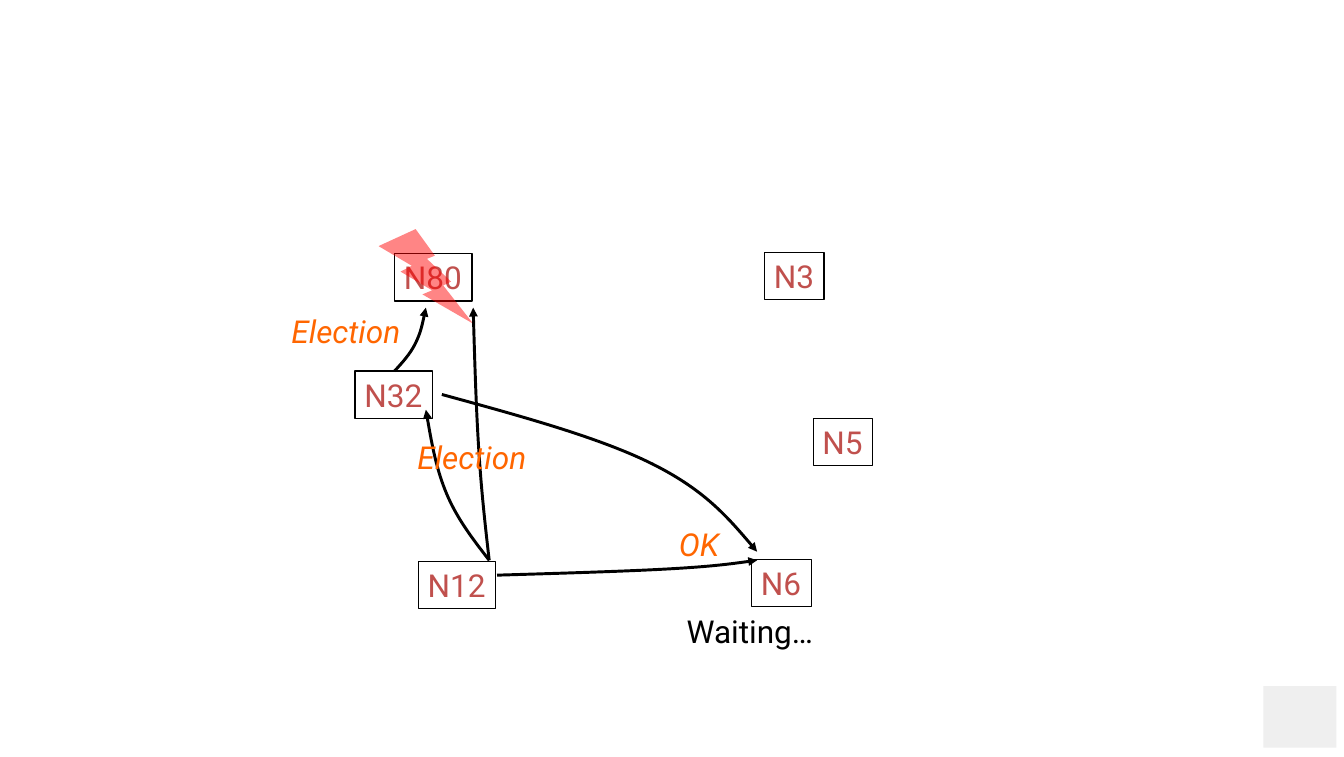
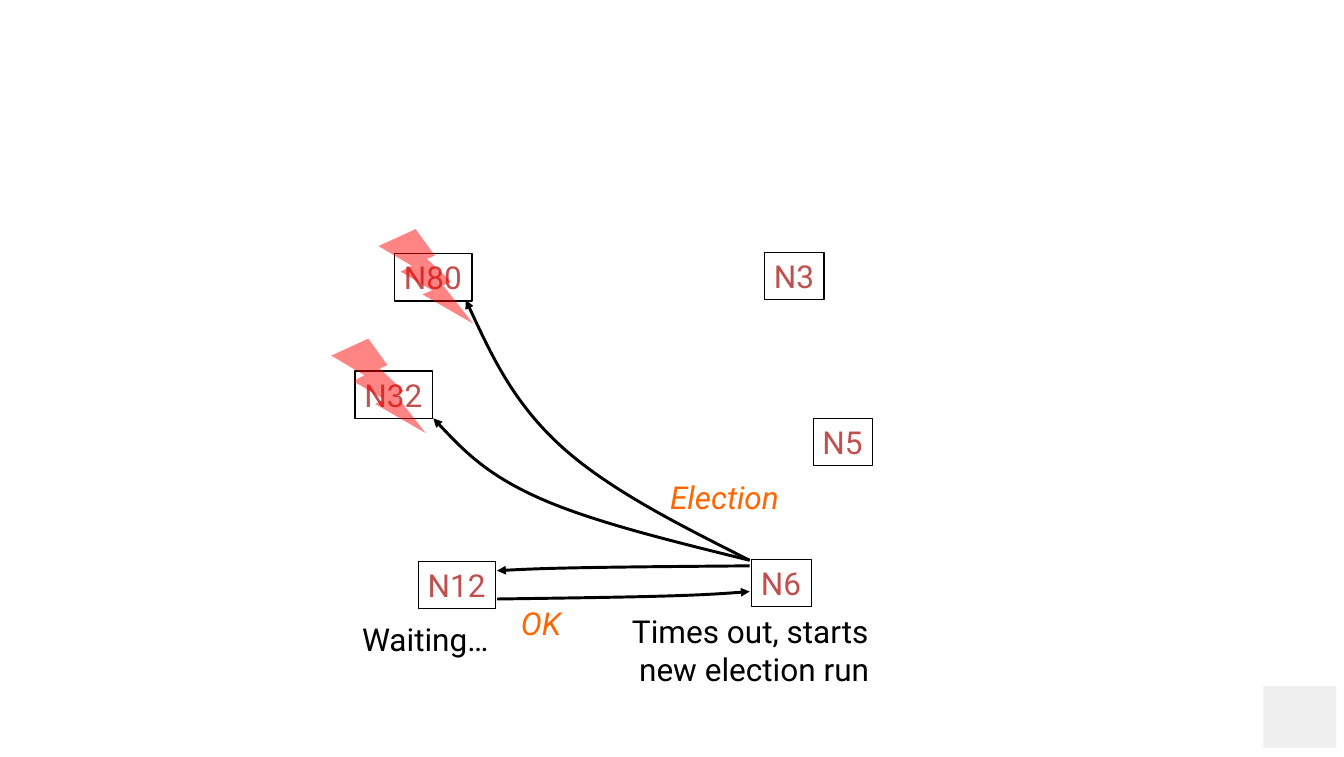
from collections import namedtuple
from dataclasses import dataclass

from lxml.etree import SubElement
from pptx import Presentation
from pptx.dml.color import RGBColor
from pptx.enum.shapes import MSO_SHAPE as Preset
from pptx.enum.text import MSO_ANCHOR as Anchor, MSO_AUTO_SIZE as AutoSize, PP_ALIGN as Align
from pptx.oxml.ns import qn
from pptx.util import Cm, Pt

Box = namedtuple("Box", "left top width height")


@dataclass(frozen=True)
class Theme:
    font: str = "Roboto"
    text_size: float = 24
    node_text: str = "C0504D"
    message: str = "FF6600"
    ink: str = "000000"
    failure: str = "FF0000"
    failure_opacity: int = 48
    corner: str = "EFEFEF"
    thin_line: float = 0.75
    node_line: float = 1
    arrow_line: float = 2.25


THEME = Theme()
DIAGRAM = Box(6.35, 5.08, 17.2, 13.6)
CORNER = Box(33.91, 18.42, 1.96, 1.65)
ROW_HEIGHT = 1.27
BOLT_SIZE = 2.54

NODES = [
    ("N12", 4.88, 9.98, 2.08, THEME.thin_line),
    ("N5", 15.47, 6.15, 1.6, THEME.thin_line),
    ("N6", 13.82, 9.93, 1.6, THEME.thin_line),
    ("N80", 4.24, 1.73, 2.08, THEME.node_line),
    ("N32", 3.18, 4.88, 2.08, THEME.node_line),
    ("N3", 14.17, 1.7, 1.6, THEME.node_line),
]
N80_FAILURE = (3.81, 1.07)
N32_FAILURE = (2.54, 4.01)
LABEL_WIDTHS = {"Election": 3.73, "OK": 1.96, "Waiting…": 4.19}

FIRST_ELECTION = {
    "failures": [N80_FAILURE],
    "arrows": [
        [(6.78, 9.96), (5.64, 8.18), (5.08, 5.92)],
        [(6.78, 9.96), (6.5, 6.99), (6.35, 3.18)],
        [(6.99, 10.36), (11.63, 10.19), (13.97, 9.96)],
        [(4.24, 4.88), (4.8, 4.14), (5.08, 3.18)],
        [(5.51, 5.51), (11.15, 7.37), (13.97, 9.73)],
    ],
    "messages": [("Election", 4.45, 6.55), ("OK", 11.43, 8.89), ("Election", 1.07, 3.18)],
    "states": [(["Waiting…"], 11.68, 11.23)],
}
NEW_ELECTION = {
    "failures": [N80_FAILURE, N32_FAILURE],
    "arrows": [
        [(13.77, 9.96), (8.69, 6.88), (6.15, 2.97)],
        [(13.77, 9.96), (8.1, 8.28), (5.28, 6.15)],
        [(13.77, 10.11), (9.25, 10.16), (6.99, 10.24)],
        [(6.99, 11), (11.51, 10.92), (13.77, 10.8)],
    ],
    "messages": [("Election", 11.23, 7.62), ("OK", 7.19, 11)],
    "states": [
        (["Times out, starts", " new election run"], 10.29, 11.23),
        (["Waiting…"], 2.97, 11.43),
    ],
}


def colour(value):
    return RGBColor.from_string(value)


def inside(box, left, top, width, height):
    return Cm(box.left + left), Cm(box.top + top), Cm(width), Cm(height)


def write(shape, lines, text_colour, align, italic=False):
    frame = shape.text_frame
    frame.word_wrap = False
    frame.auto_size = AutoSize.SHAPE_TO_FIT_TEXT
    frame.vertical_anchor = Anchor.TOP
    for index, line in enumerate(lines):
        paragraph = frame.add_paragraph() if index else frame.paragraphs[0]
        paragraph.alignment = align
        run = paragraph.add_run()
        run.text = line
        run.font.name = THEME.font
        run.font.size = Pt(THEME.text_size)
        run.font.italic = italic
        run.font.color.rgb = colour(text_colour)


def add_filled(slide, preset, place, fill_colour):
    shape = slide.shapes.add_shape(preset, *place)
    shape.shadow.inherit = False
    shape.line.fill.background()
    shape.fill.solid()
    shape.fill.fore_color.rgb = colour(fill_colour)
    return shape


def add_node(slide, box, name, left, top, width, line_width):
    place = inside(box, left, top, width, ROW_HEIGHT)
    shape = slide.shapes.add_shape(Preset.RECTANGLE, *place)
    shape.shadow.inherit = False
    shape.fill.background()
    shape.line.color.rgb = colour(THEME.ink)
    shape.line.width = Pt(line_width)
    write(shape, [name], THEME.node_text, Align.LEFT)


def add_failure(slide, box, left, top):
    place = inside(box, left, top, BOLT_SIZE, BOLT_SIZE)
    shape = add_filled(slide, Preset.LIGHTNING_BOLT, place, THEME.failure)
    fill = next(shape.element.spPr.iter(qn("a:srgbClr")))
    SubElement(fill, qn("a:alpha")).set("val", str(THEME.failure_opacity * 1000))


def curve_points(start, middle, end):
    tangent = [(b - a) / 6 for a, b in zip(start, end)]
    before = [m - t for m, t in zip(middle, tangent)]
    after = [m + t for m, t in zip(middle, tangent)]
    leaving = [(a + b) / 2 for a, b in zip(start, before)]
    arriving = [(a + b) / 2 for a, b in zip(after, end)]
    return [start, leaving, before, middle, after, arriving, end]


def bend(shape):
    segments = list(shape.element.iter(qn("a:lnTo")))
    for first in range(0, len(segments), 3):
        parent = segments[first].getparent()
        curve = SubElement(parent, qn("a:cubicBezTo"))
        for segment in segments[first:first + 3]:
            curve.append(segment[0])
            parent.remove(segment)


def add_arrow(slide, box, knots):
    start, *others = [
        (Cm(box.left + x), Cm(box.top + y)) for x, y in curve_points(*knots)
    ]
    builder = slide.shapes.build_freeform(*start)
    builder.add_line_segments(others, close=False)
    shape = builder.convert_to_shape()
    bend(shape)
    shape.shadow.inherit = False
    shape.fill.background()
    shape.line.color.rgb = colour(THEME.ink)
    shape.line.width = Pt(THEME.arrow_line)
    outline = shape.element.spPr.find(qn("a:ln"))
    SubElement(outline, qn("a:tailEnd")).set("type", "triangle")


def add_label(slide, box, lines, left, top, text_colour, italic=False):
    width = LABEL_WIDTHS.get(lines[0], 6.99)
    height = ROW_HEIGHT + 1.04 * (len(lines) - 1)
    label = slide.shapes.add_textbox(*inside(box, left, top, width, height))
    write(label, lines, text_colour, Align.CENTER, italic)


def add_diagram(slide, box, step):
    for node in NODES:
        add_node(slide, box, *node)
    for failure in step["failures"]:
        add_failure(slide, box, *failure)
    for knots in step["arrows"]:
        add_arrow(slide, box, knots)
    for text, left, top in step["messages"]:
        add_label(slide, box, [text], left, top, THEME.message, italic=True)
    for lines, left, top in step["states"]:
        add_label(slide, box, lines, left, top, THEME.ink)


def add_corner(slide, box):
    place = inside(box, 0, 0, box.width, box.height)
    add_filled(slide, Preset.RECTANGLE, place, THEME.corner)


def main():
    presentation = Presentation()
    presentation.slide_width = Cm(36.07)
    presentation.slide_height = Cm(20.32)
    for step in (FIRST_ELECTION, NEW_ELECTION):
        slide = presentation.slides.add_slide(presentation.slide_layouts[6])
        add_corner(slide, CORNER)
        add_diagram(slide, DIAGRAM, step)
    presentation.save("out.pptx")


if __name__ == "__main__":
    main()
